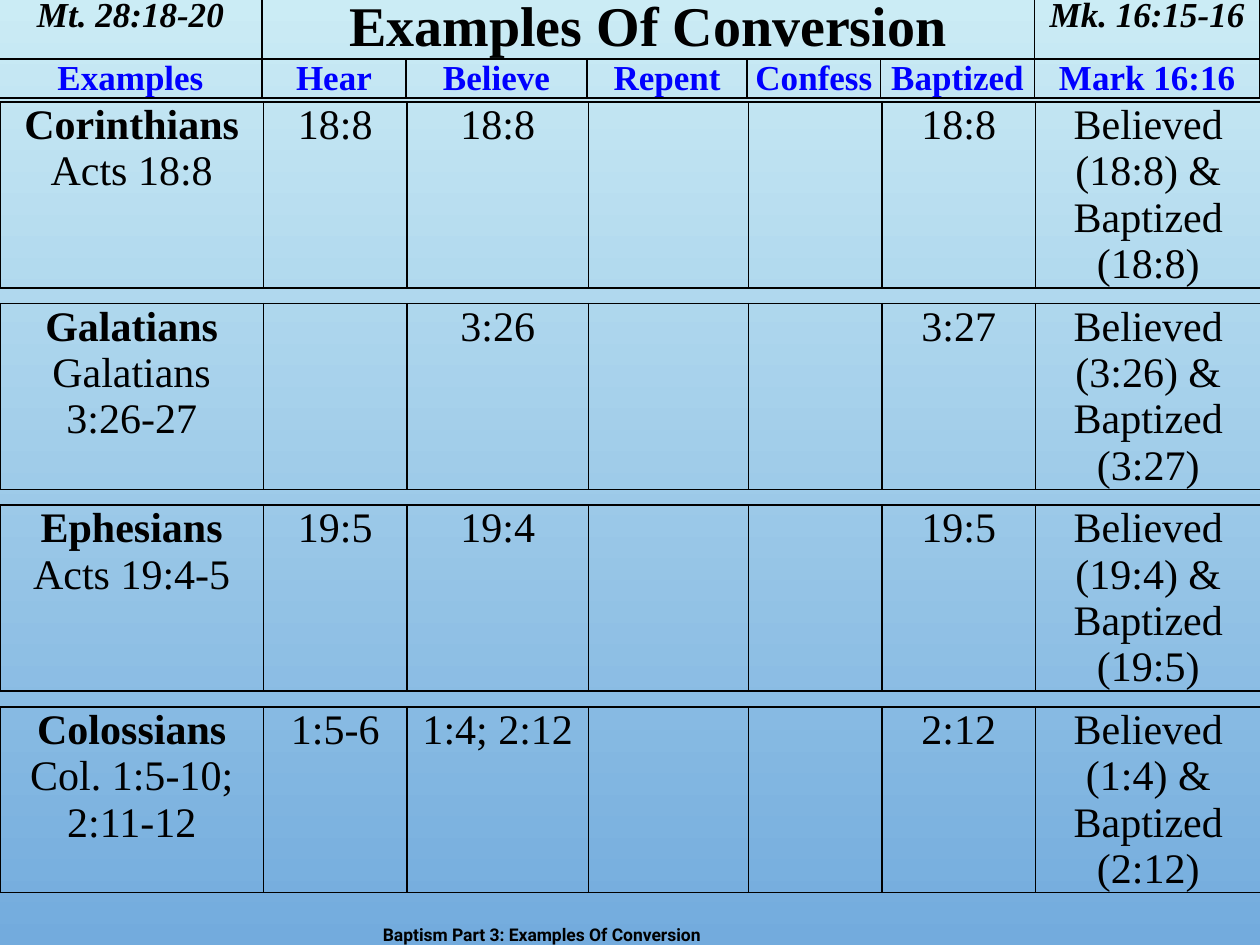
"""Build the Examples Of Conversion slide."""
from dataclasses import dataclass

from lxml import etree
from pptx import Presentation
from pptx.dml.color import RGBColor
from pptx.enum import text as t
from pptx.oxml import ns
from pptx.util import Pt

SERIF = "Times New Roman"
BLACK, BLUE = "000000", "0000FF"
COLUMNS = [150.5, 82.1, 103.7, 91.4, 76.3, 87.8, 128.9]
HEADINGS = ["Examples", "Hear", "Believe", "Repent", "Confess", "Baptized", "Mark 16:16"]
WIDTH, ROW_HEIGHT, FRAME_HEIGHT = 720, 26.6, 115.2
FIRST_TOP, STEP = 58.3, 115.2
NARROW, WIDE = 3.6, 5.2


@dataclass
class Example:
    name: str
    passage: str
    hear: str
    believe: str
    baptized: str
    summary: str
    inset: float = NARROW


EXAMPLES = [
    Example("Corinthians", "Acts 18:8", "18:8", "18:8", "18:8",
            "Believed (18:8) & Baptized (18:8)"),
    Example("Galatians", "Galatians 3:26-27", "", "3:26", "3:27",
            "Believed (3:26) & Baptized (3:27)", WIDE),
    Example("Ephesians", "Acts 19:4-5", "19:5", "19:4", "19:5",
            "Believed (19:4) & Baptized (19:5)"),
    Example("Colossians", "Col. 1:5-10; 2:11-12", "1:5-6", "1:4; 2:12", "2:12",
            "Believed (1:4) & Baptized (2:12)"),
]


def color(value: str) -> RGBColor:
    return RGBColor.from_string(value)


def style(para, size: float, bold: bool, italic: bool = False,
          ink: str = BLACK, face: str = SERIF) -> None:
    for span in para.runs:
        font = span.font
        font.name, font.size, font.bold, font.italic = face, Pt(size), bold, italic
        font.color.rgb = color(ink)


def add_borders(cell) -> None:
    properties = cell._tc.get_or_add_tcPr()
    for side in "LRTB":
        line = etree.SubElement(properties, ns.qn(f"a:ln{side}"), w=str(Pt(1)))
        fill = etree.SubElement(line, ns.qn("a:solidFill"))
        etree.SubElement(fill, ns.qn("a:srgbClr"), val=BLACK)


def add_grid(page, left: float, top: float, height: float, rows: list[float]):
    frame = page.shapes.add_table(len(rows), len(COLUMNS), Pt(left), Pt(top),
                                  Pt(WIDTH), Pt(height))
    table = frame.table
    table.first_row = table.horz_banding = False
    for column, width in zip(table.columns, COLUMNS):
        column.width = Pt(width)
    for row, row_height in zip(table.rows, rows):
        row.height = Pt(row_height)
    frame.width, frame.height = Pt(WIDTH), Pt(height)
    for cell in table.iter_cells():
        add_borders(cell)
        cell.fill.background()
    return table


def write_cell(cell, content: str, size: float, bold: bool = False, italic: bool = False,
               ink: str = BLACK, inset: float = NARROW) -> None:
    cell.margin_left = cell.margin_right = Pt(inset)
    cell.margin_top = cell.margin_bottom = 0
    cell.text_frame.text = content
    for para in cell.text_frame.paragraphs:
        para.alignment = t.PP_ALIGN.CENTER
        style(para, size, bold, italic, ink)


def add_header(page) -> None:
    table = add_grid(page, -0.7, -2.2, 62.6, [36, 15.1])
    table.cell(0, 1).merge(table.cell(0, 5))
    write_cell(table.cell(0, 0), "Mt. 28:18-20", 20, True, True)
    write_cell(table.cell(0, 1), "Examples Of Conversion", 32, True)
    write_cell(table.cell(0, 6), "Mk. 16:15-16", 20, True, True)
    for index, heading in enumerate(HEADINGS):
        write_cell(table.cell(1, index), heading, 20, True, ink=BLUE)


def add_example(page, example: Example, top: float) -> None:
    table = add_grid(page, 0, top, FRAME_HEIGHT, [ROW_HEIGHT])
    contents = [f"{example.name}\n{example.passage}", example.hear, example.believe,
                "", "", example.baptized, example.summary]
    for index, content in enumerate(contents):
        inset = WIDE if index == len(contents) - 1 else example.inset
        write_cell(table.cell(0, index), content, 24, inset=inset)
    style(table.cell(0, 0).text_frame.paragraphs[0], 24, True)


def add_footer(page) -> None:
    box = page.shapes.add_textbox(Pt(211.7), Pt(527.8), Pt(293.8), Pt(12.2))
    frame = box.text_frame
    frame.word_wrap = True
    frame.vertical_anchor = t.MSO_ANCHOR.MIDDLE
    frame.text = "Baptism Part 3: Examples Of Conversion"
    style(frame.paragraphs[0], 10, True, face="Roboto")


def paint_background(page) -> None:
    fill = page.background.fill
    fill.gradient()
    fill.gradient_angle = 270
    for stop, position, shade in zip(fill.gradient_stops, (0, 1), ("CBECF5", "73ABDD")):
        stop.position = position
        stop.color.rgb = color(shade)


def main() -> None:
    deck = Presentation()
    deck.slide_width, deck.slide_height = Pt(WIDTH), Pt(540)
    page = deck.slides.add_slide(deck.slide_layouts[6])
    paint_background(page)
    add_header(page)
    for index, example in enumerate(EXAMPLES):
        add_example(page, example, FIRST_TOP + index * STEP)
    add_footer(page)
    deck.save("out.pptx")


if __name__ == "__main__":
    main()
